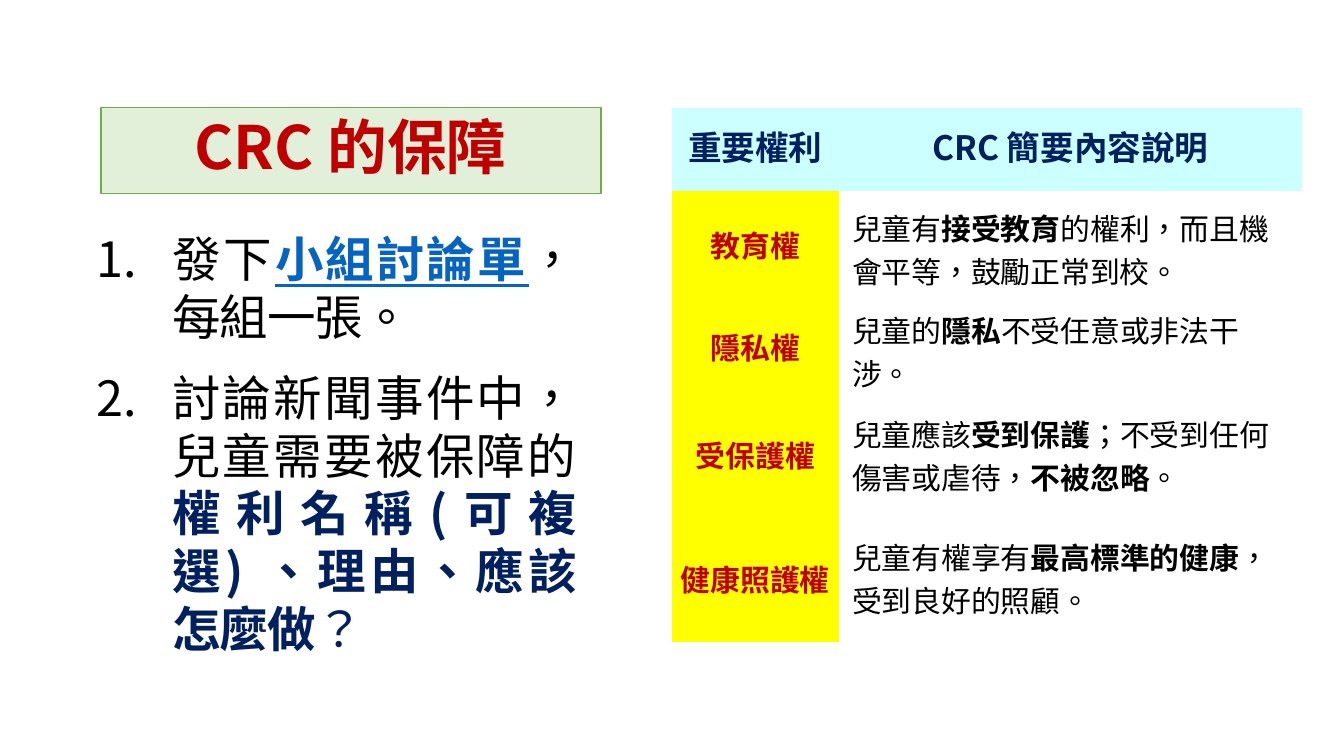
from typing import NamedTuple

from lxml.etree import SubElement
from pptx import Presentation
from pptx.dml.color import RGBColor
from pptx.enum.text import MSO_ANCHOR, MSO_AUTO_SIZE, PP_ALIGN
from pptx.oxml.ns import qn
from pptx.util import Inches, Pt

FACE = "Noto Sans CJK SC"
HUES = {"black": "000000", "red": "C00000", "navy": "002060", "blue": "0563C1",
        "green": "70AD47", "mint": "E2F0D9", "cyan": "CCFFFF",
        "yellow": "FFFF00"}


class Span(NamedTuple):
    text: str
    hue: str = "black"
    bold: bool = False
    line: bool = False
    gap: int = 0  # letter spacing in hundredths of a point


class Right(NamedTuple):
    name: str
    note: str  # words between asterisks are bold
    high: float
    lead: int | None  # line spacing of the name in points


def color(key: str) -> RGBColor:
    return RGBColor.from_string(HUES[key])


def paint(fill, key: str) -> None:
    fill.solid()
    fill.fore_color.rgb = color(key)


def write(para, spans: list[Span], size: int) -> None:
    for span in spans:
        run = para.add_run()
        run.text = span.text
        font = run.font
        font.size, font.bold, font.underline = Pt(size), span.bold, span.line
        font.color.rgb = color(span.hue)
        font.name = FACE
        props = run._r.get_or_add_rPr()
        props.set("lang", "zh-TW")
        props.set("altLang", "en-US")
        SubElement(props, qn("a:ea")).set("typeface", FACE)
        if span.gap:
            props.set("spc", str(span.gap))


def indent(para, left: float, first: float = 0):
    props = para._p.get_or_add_pPr()
    props.set("marL", str(Inches(left)))
    props.set("indent", str(Inches(first)))
    return props


def number(para) -> None:
    props = indent(para, 0.56, -0.56)
    tint = SubElement(props, qn("a:buClr"))
    SubElement(tint, qn("a:srgbClr")).set("val", HUES["black"])
    SubElement(props, qn("a:buFont")).set("typeface", FACE)
    SubElement(props, qn("a:buAutoNum")).set("type", "arabicPeriod")


def place(shape, left: float, top: float, wide: float, high: float) -> None:
    shape.left, shape.top = Inches(left), Inches(top)
    shape.width, shape.height = Inches(wide), Inches(high)


def fill_cell(cell, spans: list[Span], size: int, back: str | None,
              side: float):
    if back:
        paint(cell.fill, back)
    else:
        cell.fill.background()
    cell.vertical_anchor = MSO_ANCHOR.MIDDLE
    cell.margin_left = cell.margin_right = Inches(side)
    cell.margin_top = cell.margin_bottom = 0
    para = cell.text_frame.paragraphs[0]
    write(para, spans, size)
    return para


def center(para, lead: int | None) -> None:
    para.alignment = PP_ALIGN.CENTER
    if lead:
        para.line_spacing = Pt(lead)
        para.space_after = Pt(6)


# Wide 16:9 page
deck = Presentation()
deck.slide_width = Inches(10)
deck.slide_height = deck.slide_width * 9 // 16
slide = deck.slides.add_slide(deck.slide_layouts[1])

# Title
title = slide.shapes.title
place(title, 0.75, 0.8, 3.72, 0.64)
paint(title.fill, "mint")
title.line.color.rgb = color("green")
title.line.width = Pt(1)
title.text_frame.vertical_anchor = MSO_ANCHOR.MIDDLE
title.text_frame.auto_size = MSO_AUTO_SIZE.NONE
head = title.text_frame.paragraphs[0]
head.alignment, head.line_spacing = PP_ALIGN.CENTER, 0.9
write(head, [Span("CRC 的保障", "red", True)], 32)

# Numbered steps
STEPS = [
    [Span("發下"), Span("小組討論單", "blue", True, True, -50),
     Span("， 每組一張。", gap=-50)],
    [Span("討論新聞事件中，兒童需要被保障的"),
     Span("權利名稱(可複選) 、理由、應該怎麼做", "navy", True, gap=-50),
     Span("？", "navy", gap=-50)],
]
body = slide.placeholders[1]
place(body, 0.62, 1.66, 3.77, 3.06)
frame = body.text_frame
frame.auto_size = MSO_AUTO_SIZE.SHAPE_TO_FIT_TEXT
for i, step in enumerate(STEPS):
    para = frame.add_paragraph() if i else frame.paragraphs[0]
    number(para)
    para.alignment = PP_ALIGN.JUSTIFY
    para.line_spacing = Pt(31)
    para.space_before, para.space_after = Pt(6 if i else 0), Pt(6)
    write(para, step, 26)

# Table of rights
RIGHTS = [
    Right("教育權", "兒童有*接受教育*的權利，而且機會平等，鼓勵正常到校。", 0.87, 18),
    Right("隱私權", "兒童的*隱私*不受任意或非法干涉。", 0.65, 18),
    Right("受保護權", "兒童應該*受到保護*；不受到任何傷害或虐待，*不被忽略*。", 0.89, None),
    Right("健康照護權", "兒童有權享有*最高標準的健康*，受到良好的照顧。", 0.95, None),
]
table = slide.shapes.add_table(len(RIGHTS) + 1, 2, Inches(5), Inches(0.8),
                               Inches(4.7), Inches(3.98)).table
table.first_row = table.horz_banding = False
plain = "{2D5ABB26-0587-4C30-8999-92F81FD0307C}"
table._tbl.tblPr.find(qn("a:tableStyleId")).text = plain
for col, wide in zip(table.columns, (1.24, 3.45)):
    col.width = Inches(wide)
table.rows[0].height = Inches(0.62)
for j, label in enumerate(("重要權利", "CRC 簡要內容說明")):
    span = Span(label, "navy", True)
    center(fill_cell(table.cell(0, j), [span], 18, "cyan", 0.07), 22)
for i, right in enumerate(RIGHTS, 1):
    table.rows[i].height = Inches(right.high)
    name = [Span(right.name, "red", True)]
    center(fill_cell(table.cell(i, 0), name, 16, "yellow", 0.06), right.lead)
    note = [Span(part, bold=k % 2 == 1)
            for k, part in enumerate(right.note.split("*"))]
    para = fill_cell(table.cell(i, 1), note, 16, None, 0.06)
    indent(para, 0.04).set("hangingPunct", "0")

deck.save("out.pptx")
